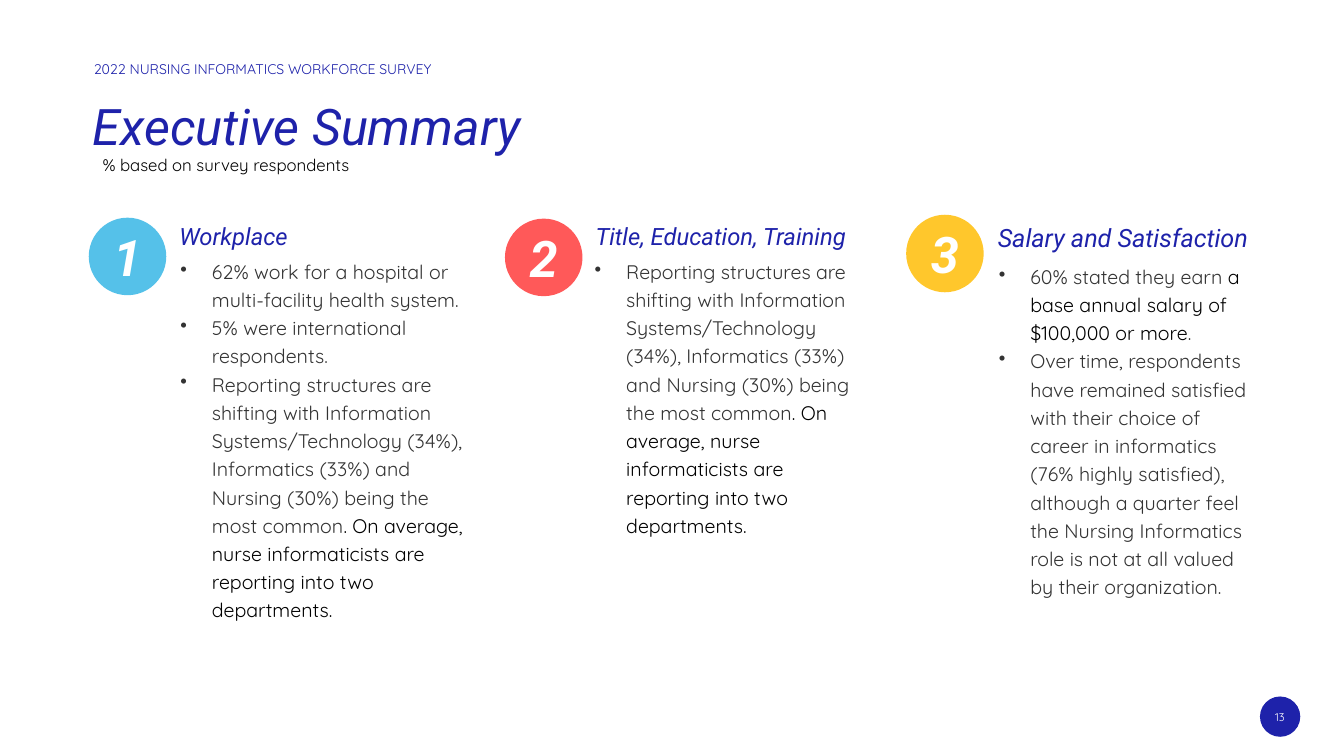
from lxml.etree import SubElement
from pptx import Presentation
from pptx.dml.color import RGBColor
from pptx.enum.shapes import MSO_SHAPE
from pptx.enum.text import MSO_ANCHOR, PP_ALIGN
from pptx.oxml.ns import qn
from pptx.util import Pt

COLORS = {
    "navy": "1E22AA",
    "sky": "55C1E9",
    "coral": "FF5959",
    "gold": "FFC72C",
    "gray": "333333",
    "black": "000000",
    "white": "FFFFFF",
}


def color(name):
    return RGBColor.from_string(COLORS[name])


def write(frame, paras, font="Quicksand", size=14, ink="black", bold=False,
          slant=False, align=PP_ALIGN.LEFT, anchor=MSO_ANCHOR.TOP,
          lead=1.0, inset=(7.2, 3.6), bullet=False):
    frame.word_wrap = True
    frame.vertical_anchor = anchor
    frame.margin_left = frame.margin_right = Pt(inset[0])
    frame.margin_top = frame.margin_bottom = Pt(inset[1])
    for index, runs in enumerate(paras):
        para = frame.add_paragraph() if index else frame.paragraphs[0]
        if bullet:
            props = para._p.get_or_add_pPr()
            props.set("marL", str(Pt(22.5)))
            props.set("indent", str(-Pt(22.5)))
            SubElement(props, qn("a:buChar")).set("char", "•")
        para.alignment = align
        para.line_spacing = lead
        for words, tint in runs:
            run = para.add_run()
            run.text = words
            run.font.name = font
            run.font.size = Pt(size)
            run.font.bold = bold
            run.font.italic = slant
            run.font.color.rgb = color(tint or ink)


class Deck:
    """Holds the style and the current slide."""

    def __init__(self):
        self.prs = Presentation()
        self.prs.slide_width = Pt(960)
        self.prs.slide_height = Pt(540)
        self.slide = self.prs.slides.add_slide(self.prs.slide_layouts[6])

    def label(self, box, words, **style):
        self.block(box, [[(words, None)]], **style)

    def block(self, box, paras, **style):
        shape = self.slide.shapes.add_textbox(*map(Pt, box))
        write(shape.text_frame, paras, **style)

    def disc(self, left, top, size, fill, words=None):
        shape = self.slide.shapes.add_shape(
            MSO_SHAPE.OVAL, Pt(left), Pt(top), Pt(size), Pt(size))
        shape.shadow.inherit = False
        shape.fill.solid()
        shape.fill.fore_color.rgb = color(fill)
        shape.line.fill.background()
        if words:
            write(shape.text_frame, [[(words, None)]], font="Roboto", size=36,
                  ink="white", bold=True, slant=True,
                  align=PP_ALIGN.CENTER, anchor=MSO_ANCHOR.MIDDLE)

    def topic(self, badge, head, body, paras):
        left, top, fill, num = badge
        x, width, size, words = head
        self.disc(left, top, 55.4, fill, num)
        self.label((x, 144.7, width, 35), words, font="Roboto", size=size,
                   ink="navy", slant=True, lead=1.5)
        self.block(body, paras, ink="gray", lead=1.2, inset=(0, 3.6),
                   bullet=True)


TOPICS = [
    ((63.4, 155.5, "sky", "1"), (121, 187.2, 17, "Workplace"),
     (128.9, 178.6, 213.1, 270),
     [[("62% work for a hospital or multi-facility health system.", None)],
      [("5% were international respondents.", None)],
      [("Reporting structures are shifting with Information "
        "Systems/Technology (34%), Informatics (33%) and Nursing (30%) "
        "being the most common", None),
       (". On average, nurse informaticists are reporting into two "
        "departments.", "black")]]),
    ((360.7, 156.2, "coral", "2"),
     (418.3, 211, 17, "Title, Education, Training"),
     (424.8, 178.6, 195.8, 229),
     [[("Reporting structures are shifting with "
        "Information Systems/Technology (34%), Informatics (33%) "
        "and Nursing (30%) being the most common", None),
       (". On average, nurse informaticists are reporting into two "
        "departments.", "black")]]),
    ((647.3, 153.4, "gold", "3"), (705.6, 207.4, 18, "Salary and Satisfaction"),
     (713.5, 182.2, 182.9, 270),
     [[("60% stated they earn ", None),
       ("a base annual salary of $100,000 or more", "black"), (".", None)],
      [("Over time, respondents have remained satisfied with their choice "
        "of career in informatics (76% highly satisfied), although a quarter "
        "feel the Nursing Informatics role is not at all valued by their "
        "organization.", None)]]),
]


def main():
    deck = Deck()
    deck.disc(900, 497.5, 28.8, "navy")
    deck.label((67, 46.1, 330, 45.4), "2022 NURSING INFORMATICS WORKFORCE SURVEY",
               size=10, ink="navy", lead=0.75, inset=(0, 0))
    deck.label((66.2, 77.8, 774, 80.6), "Executive Summary", font="Roboto",
               size=36, ink="navy", slant=True, lead=0.75, inset=(0, 0))
    deck.label((66.2, 107.3, 365, 21.6), "% based on survey respondents", size=12)
    deck.label((894.2, 503.3, 40.3, 18), "13", size=8, ink="white",
               align=PP_ALIGN.CENTER, anchor=MSO_ANCHOR.MIDDLE, inset=(0, 0))
    for topic in TOPICS:
        deck.topic(*topic)
    deck.prs.save("out.pptx")


if __name__ == "__main__":
    main()
